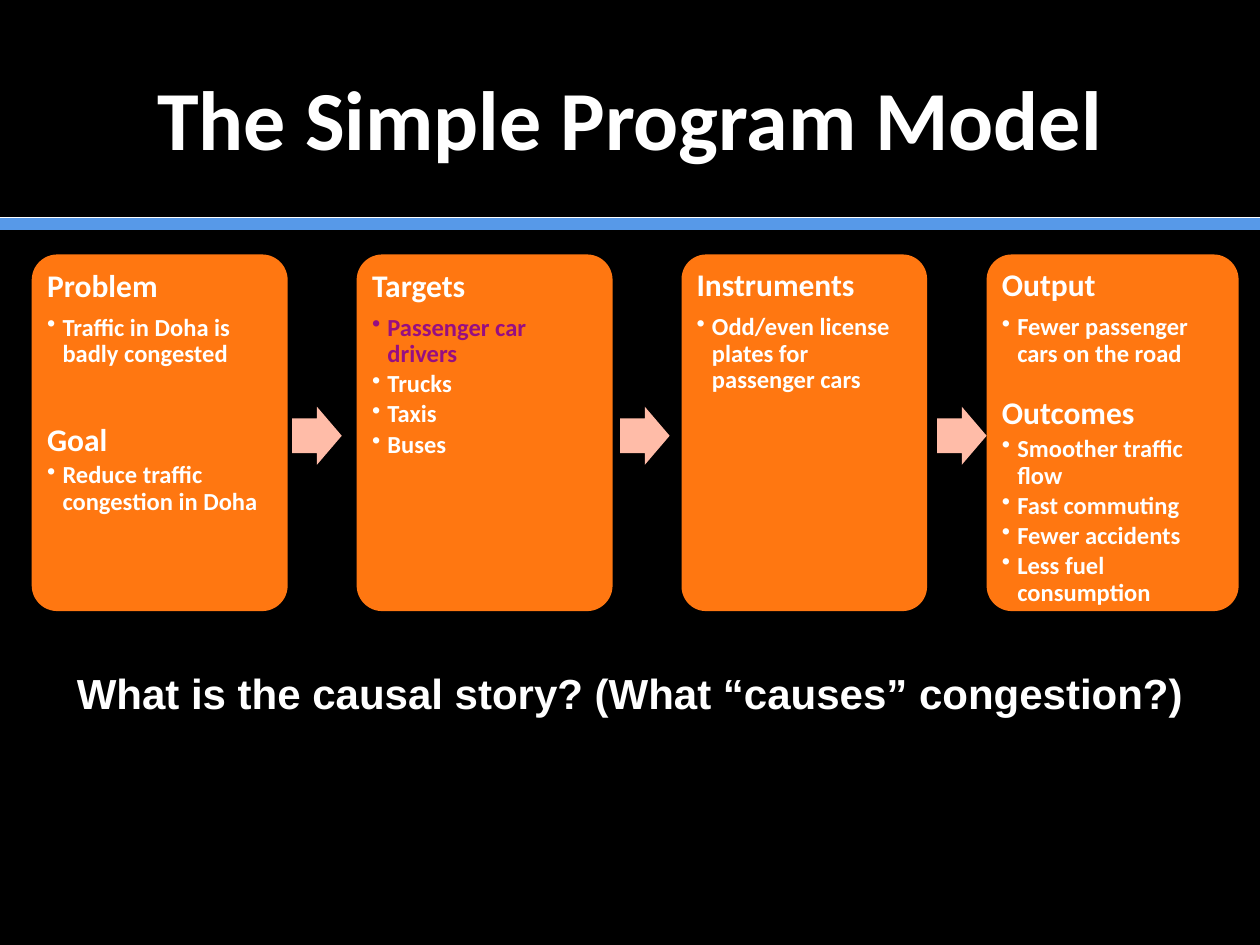
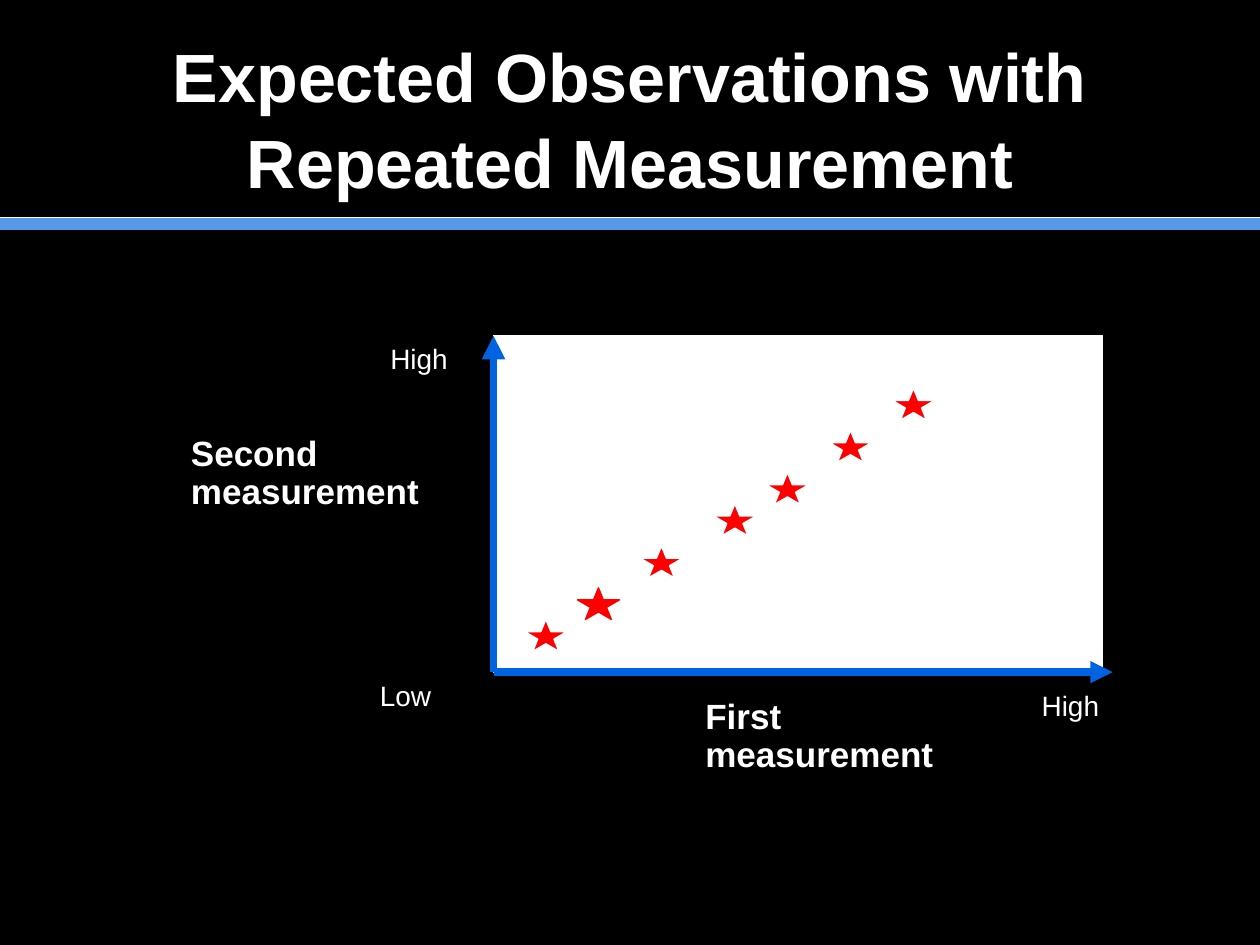
"""Build two slides: the simple program model and repeated measurement."""
from lxml import etree
from pptx import Presentation
from pptx.dml.color import RGBColor
from pptx.enum.shapes import MSO_CONNECTOR, MSO_SHAPE as SHAPE
from pptx.enum.text import MSO_ANCHOR as ANCHOR, PP_ALIGN as ALIGN
from pptx.oxml.ns import qn
from pptx.util import Cm, Pt

COLORS = {k: RGBColor.from_string(v) for k, v in {
    "black": "000000", "white": "FFFFFF", "band": "5799E8", "card": "FF7711",
    "arrow": "FFBCA8", "purple": "970E82", "axis": "0064E2", "red": "FF0000",
}.items()}


def add_line(s, x1, y1, x2, y2, color, width, arrow=False):
    c = s.shapes.add_connector(MSO_CONNECTOR.STRAIGHT, Cm(x1), Cm(y1), Cm(x2), Cm(y2))
    c.line.color.rgb = COLORS[color]
    c.line.width = Pt(width)
    if arrow:
        etree.SubElement(c.line._get_or_add_ln(), qn("a:tailEnd"), type="triangle")
    etree.SubElement(c._element.spPr, qn("a:effectLst"))


def add_text(s, text, x, y, w, h, size, bold=True, font="Arial", spacing=None):
    tf = s.shapes.add_textbox(Cm(x), Cm(y), Cm(w), Cm(h)).text_frame
    tf.word_wrap = True
    p = tf.paragraphs[0]
    p.line_spacing = spacing
    r = p.add_run()
    r.text = text
    r.font.size, r.font.bold, r.font.name = Pt(size), bold, font
    r.font.color.rgb = COLORS["white"]
    return tf


prs = Presentation()
prs.slide_width, prs.slide_height = Cm(25.4), Cm(19.05)

titles = [
    ("The Simple Program Model", 48, "Calibri", None),
    ("Expected Observations with Repeated Measurement", 39, "Arial", 1.05),
]
for title, size, font, spacing in titles:
    s = prs.slides.add_slide(prs.slide_layouts[6])
    s.background.fill.solid()
    s.background.fill.fore_color.rgb = COLORS["black"]
    add_line(s, 0, 4.52, 25.4, 4.52, "band", 7)
    add_line(s, 0, 4.39, 25.4, 4.39, "white", 0.5)
    tf = add_text(s, title, 1.27, 0.76, 22.86, 3.18, size, True, font, spacing)
    tf.vertical_anchor = ANCHOR.MIDDLE
    tf.paragraphs[0].alignment = ALIGN.CENTER

model, scatter = prs.slides

cards = [
    (0.64, 5.16, [
        ("Problem", ["Traffic in Doha is badly congested"], 0),
        ("Goal", ["Reduce traffic congestion in Doha"], 30)]),
    (7.19, 5.16, [
        ("Targets", ["Passenger car drivers", "Trucks", "Taxis", "Buses"], 0)]),
    (13.74, 4.95, [
        ("Instruments", ["Odd/even license plates for passenger cars"], 0)]),
    (19.89, 5.08, [
        ("Output", ["Fewer passenger cars on the road"], 0),
        ("Outcomes", ["Smoother traffic flow", "Fast commuting",
                      "Fewer accidents", "Less fuel consumption"], 15)]),
]
for x, w, sections in cards:
    sp = model.shapes.add_shape(SHAPE.ROUNDED_RECTANGLE, Cm(x), Cm(5.13), Cm(w), Cm(7.19))
    sp.adjustments[0] = 0.1
    sp.shadow.inherit = False
    sp.fill.solid()
    sp.fill.fore_color.rgb = COLORS["card"]
    sp.line.fill.background()
    tf = sp.text_frame
    tf.word_wrap = True
    tf.vertical_anchor = ANCHOR.TOP
    tf.margin_left = tf.margin_right = tf.margin_top = tf.margin_bottom = Cm(0.16)
    p = tf.paragraphs[0]
    for heading, bullets, gap in sections:
        for text in [heading] + bullets:
            if p.runs:
                p = tf.add_paragraph()
            is_heading = text == heading
            p.alignment = ALIGN.LEFT
            p.line_spacing = 0.9
            if is_heading:
                if gap:
                    p.space_before = Pt(gap)
                p.space_after = Pt(2.7 if gap else 6.3)
            else:
                p.space_after = Pt(2.1)
                pPr = p._p.get_or_add_pPr()
                pPr.set("marL", str(Cm(0.31)))
                pPr.set("indent", str(-Cm(0.31)))
                etree.SubElement(pPr, qn("a:buChar"), char="•")
            r = p.add_run()
            r.text = text
            r.font.size = Pt(18 if is_heading else 14)
            r.font.bold, r.font.name = True, "Calibri"
            r.font.color.rgb = COLORS["purple" if text == "Passenger car drivers" else "white"]

for x in (5.89, 12.5, 18.89):
    sp = model.shapes.add_shape(SHAPE.RIGHT_ARROW, Cm(x), Cm(8.2), Cm(1), Cm(1.17))
    sp.adjustments[0], sp.adjustments[1] = 0.6, 0.5
    sp.shadow.inherit = False
    sp.fill.solid()
    sp.fill.fore_color.rgb = COLORS["arrow"]
    sp.line.fill.background()

add_text(model, "What is the causal story? (What “causes” congestion?)",
         1.3, 13.34, 23.55, 1.27, 24)

left, top, width, height = 9.95, 6.77, 12.28, 6.78
bottom = top + height
star_w, star_h = 0.85, 0.64
marks = [(SHAPE.RECTANGLE, left, top, width, height, "white", "white")]
stars = [(10.58, 12.49), (11.64, 11.85), (12.91, 11.01), (14.39, 10.16),
         (15.45, 9.53), (16.72, 8.68), (17.99, 7.83)]
for i, (x, y) in enumerate(stars):
    marks.append((SHAPE.STAR_5_POINT, x, y, star_w, star_h, "red", "red" if i == 1 else "white"))
for shape, x, y, w, h, fill, outline in marks:
    sp = scatter.shapes.add_shape(shape, Cm(x), Cm(y), Cm(w), Cm(h))
    sp.shadow.inherit = False
    sp.fill.solid()
    sp.fill.fore_color.rgb = COLORS[fill]
    sp.line.color.rgb = COLORS[outline]
    sp.line.width = Pt(0.75)

add_line(scatter, left, bottom, left, top, "axis", 4.5, True)
add_line(scatter, left, bottom, 22.43, bottom, "axis", 4.25, True)

for text, x, y, h in [("Second measurement", 3.6, 8.68, 2.96),
                      ("First measurement", 13.97, 13.97, 1.78)]:
    add_text(scatter, text, x, y, 5.5, h, 20, spacing=0.9)
for text, x, y, w in [("Low", 7.41, 13.55, 2.12), ("High", 7.62, 6.77, 1.7),
                      ("High", 20.75, 13.76, 1.7)]:
    add_text(scatter, text, x, y, w, 0.94, 16, bold=False)

prs.save("out.pptx")
